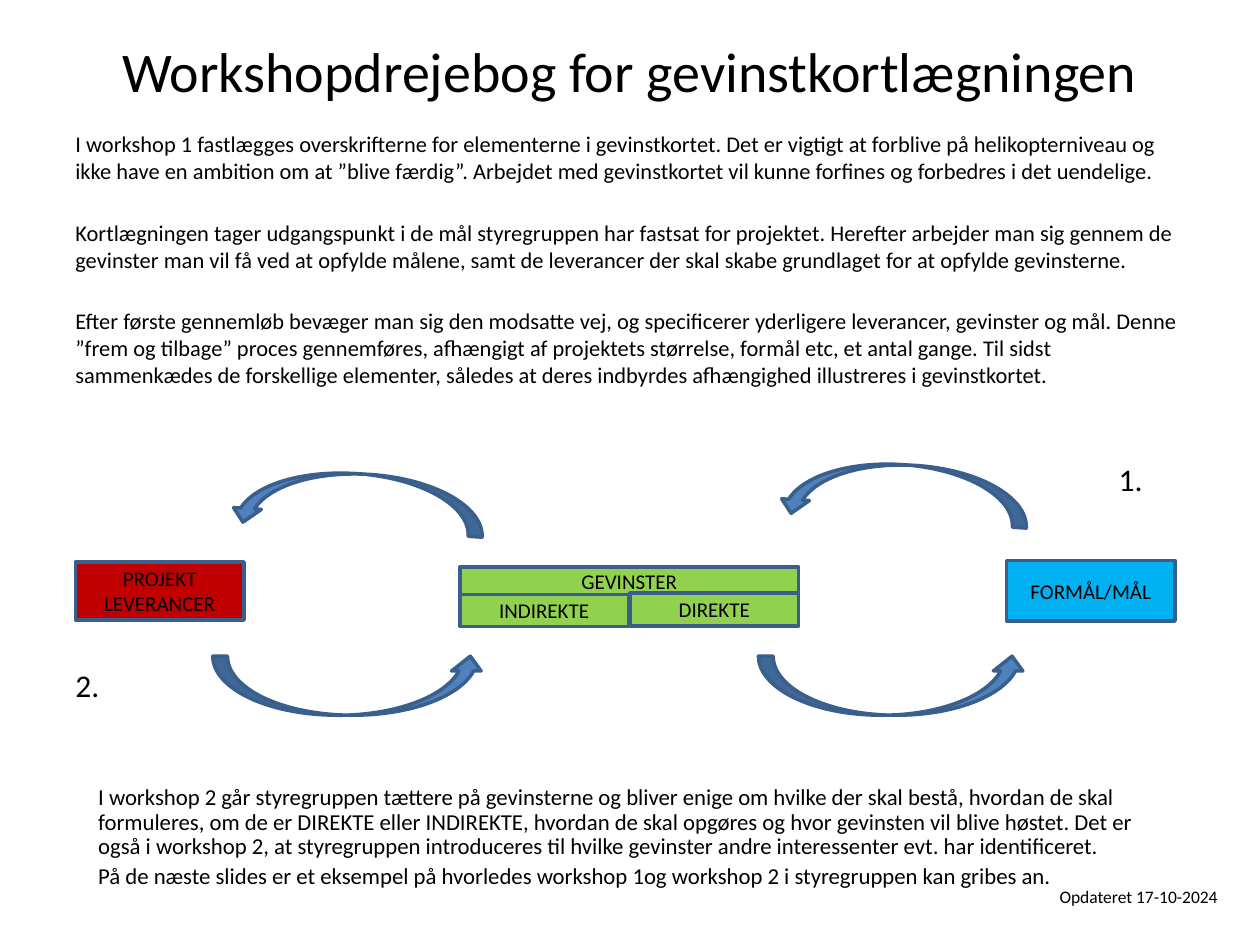
from pptx import Presentation
from pptx.dml.color import RGBColor
from pptx.enum.shapes import MSO_SHAPE
from pptx.enum.text import MSO_ANCHOR, PP_ALIGN
from pptx.util import Cm, Pt

RECT = MSO_SHAPE.RECTANGLE
ARC = MSO_SHAPE.CURVED_DOWN_ARROW
LEFT, CENTER = PP_ALIGN.LEFT, PP_ALIGN.CENTER
TOP, MIDDLE = MSO_ANCHOR.TOP, MSO_ANCHOR.MIDDLE

BLACK = RGBColor(0x00, 0x00, 0x00)
GREEN = RGBColor(0x92, 0xD0, 0x50)
CYAN = RGBColor(0x00, 0xB0, 0xF0)
RED = RGBColor(0xC0, 0x00, 0x00)
BLUE = RGBColor(0x4F, 0x81, 0xBD)
EDGE = RGBColor(0x3A, 0x5F, 0x8C)

TITLE = "Workshopdrejebog for gevinstkortlægningen"
INTRO = [
    "I workshop 1 fastlægges overskrifterne for elementerne i gevinstkortet. "
    "Det er vigtigt at forblive på helikopterniveau og ikke have en ambition "
    "om at ”blive færdig”. Arbejdet med gevinstkortet vil kunne forfines og "
    "forbedres i det uendelige.",
    "Kortlægningen tager udgangspunkt i de mål styregruppen har fastsat for "
    "projektet. Herefter arbejder man sig gennem de gevinster man vil få ved "
    "at opfylde målene, samt de leverancer der skal skabe grundlaget for at "
    "opfylde gevinsterne.",
    "Efter første gennemløb bevæger man sig den modsatte vej, og specificerer "
    "yderligere leverancer, gevinster og mål. Denne ”frem og tilbage” proces "
    "gennemføres, afhængigt af projektets størrelse, formål etc, et antal "
    "gange. Til sidst sammenkædes de forskellige elementer, således at deres "
    "indbyrdes afhængighed illustreres i gevinstkortet.",
]
OUTRO = [
    "I workshop 2 går styregruppen tættere på gevinsterne og bliver enige om "
    "hvilke der skal bestå, hvordan de skal formuleres, om de er DIREKTE eller "
    "INDIREKTE, hvordan de skal opgøres og hvor gevinsten vil blive høstet. "
    "Det er også i workshop 2, at styregruppen introduceres til hvilke "
    "gevinster andre interessenter evt. har identificeret.",
    "På de næste slides er et eksempel på hvorledes workshop 1og workshop 2 "
    "i styregruppen kan gribes an.",
]

# left, top, width, height in cm
BOXES = [
    (["GEVINSTER"], (9.27, 11.43, 6.83, 0.58), GREEN),
    (["FORMÅL/MÅL"], (20.29, 11.3, 3.4, 1.22), CYAN),
    (["PROJEKT", "LEVERANCER"], (1.52, 11.33, 3.4, 1.17), RED),
    (["INDIREKTE"], (9.27, 11.99, 3.4, 0.64), GREEN),
    (["DIREKTE"], (12.7, 11.96, 3.4, 0.66), GREEN),
]
ARCS = [
    ((4.29, 13.23, 5.49, 1.19), "flipV", 0),
    ((15.29, 13.23, 5.41, 1.19), "flipV", 0),
    ((15.7, 9.37, 5.03, 1.12), "flipH", 3.6),
    ((4.65, 9.55, 5.11, 1.12), "flipH", 3.6),
]


def write(frame, lines, size, align, gap=0, pitch=None):
    """Fill a text frame, with gap points between its paragraphs."""
    for i, line in enumerate(lines):
        para = frame.add_paragraph() if i else frame.paragraphs[0]
        para.alignment = align
        para.space_before = Pt(gap if i else 0)
        para.line_spacing = pitch
        run = para.add_run()
        run.text = line
        run.font.name = "Calibri"
        run.font.size = Pt(size)
        run.font.color.rgb = BLACK


def add_text(slide, lines, area, size, align=LEFT, anchor=TOP, **gaps):
    frame = slide.shapes.add_textbox(*map(Cm, area)).text_frame
    frame.word_wrap = True
    frame.vertical_anchor = anchor
    write(frame, lines, size, align, **gaps)
    return frame


def add_form(slide, kind, area, fill):
    """Add a preset shape with the common outline."""
    form = slide.shapes.add_shape(kind, *map(Cm, area))
    form.shadow.inherit = False
    form.fill.solid()
    form.fill.fore_color.rgb = fill
    form.line.color.rgb = EDGE
    form.line.width = Pt(2)
    return form


def add_box(slide, lines, area, fill):
    frame = add_form(slide, RECT, area, fill).text_frame
    frame.vertical_anchor = MIDDLE
    write(frame, lines, 12, CENTER)


def add_arc(slide, area, flip, turn):
    arc = add_form(slide, ARC, area, BLUE)
    arc.rotation = turn
    arc.element.spPr.find("{*}xfrm").set(flip, "1")


def main():
    deck = Presentation()
    deck.slide_width, deck.slide_height = Cm(25.4), Cm(19.05)
    slide = deck.slides.add_slide(deck.slide_layouts[6])

    add_text(slide, [TITLE], (1.27, 0.53, 22.86, 1.75), 32, CENTER, MIDDLE)
    intro = add_text(slide, INTRO, (1.27, 1.85, 22.86, 6.76), 12.8, gap=20)
    intro.margin_top = Cm(0.77)

    for box in BOXES:
        add_box(slide, *box)
    for arc in ARCS:
        add_arc(slide, *arc)

    add_text(slide, ["1."], (22.3, 9.14, 0.99, 1.02), 18)
    add_text(slide, ["2."], (1.27, 13.31, 0.99, 1.02), 18)
    add_text(slide, OUTRO, (1.73, 15.72, 21.79, 2.36), 13, gap=2.6, pitch=0.9)
    add_text(slide, ["Opdateret 17-10-2024"], (21.11, 17.73, 3.99, 0.69), 10)
    deck.save("out.pptx")


if __name__ == "__main__":
    main()
